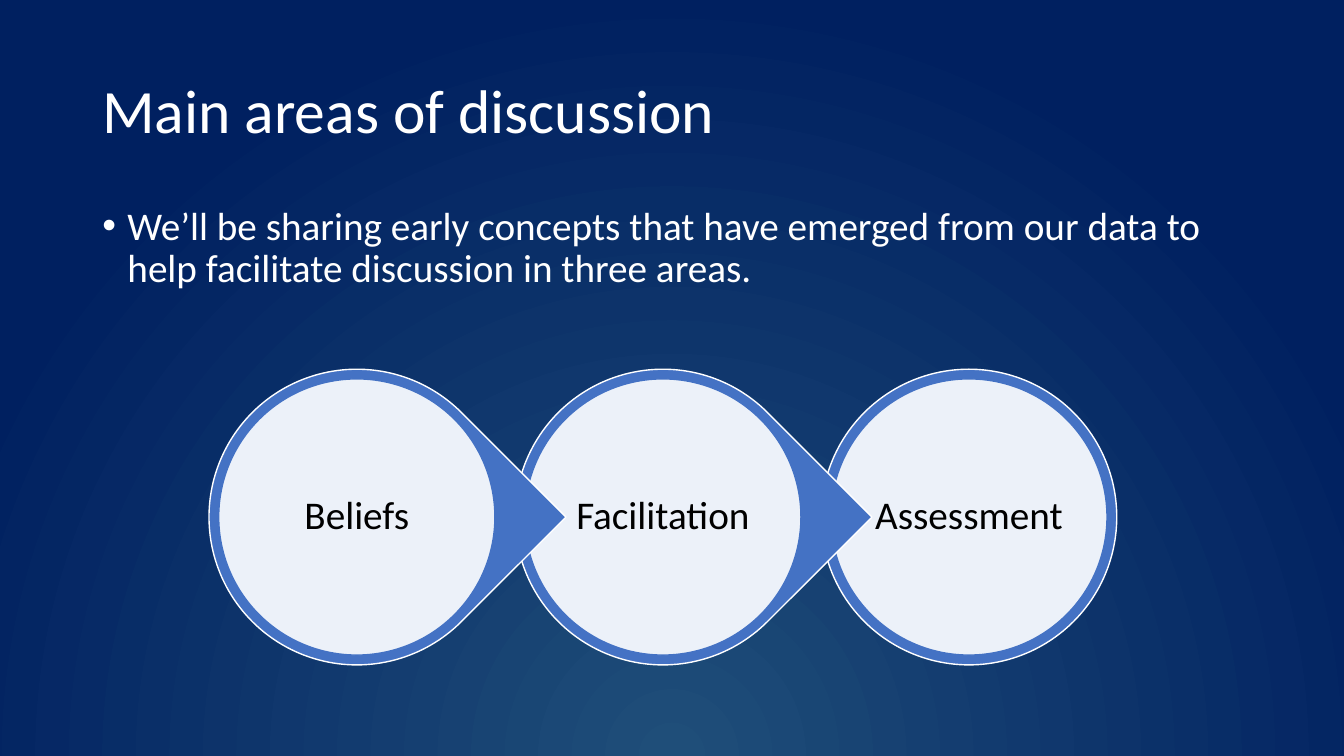
from lxml.etree import SubElement
from pptx import Presentation
from pptx.dml.color import RGBColor
from pptx.enum.shapes import MSO_SHAPE
from pptx.enum.text import MSO_ANCHOR, PP_ALIGN
from pptx.oxml.ns import qn
from pptx.util import Pt

WHITE = RGBColor(0xFF, 0xFF, 0xFF)
BLACK = RGBColor(0x00, 0x00, 0x00)
BLUE = RGBColor(0x44, 0x72, 0xC4)
NAVY = RGBColor(0x00, 0x20, 0x60)
TEAL = RGBColor(0x1F, 0x4E, 0x79)

FONT = "Calibri"
AREAS = ["Beliefs", "Facilitation", "Assessment"]
FIRST_CENTER = 254.9
CENTER_Y = 369.3
PITCH = 218.6
RING_SIZE = 211.2
DISC_SIZE = 197.3
LABEL_SIZE = 141.1


def set_background(slide):
    """Radial gradient, glowing from below the slide."""
    fill = slide.background.fill
    fill.gradient()
    for stop, color in zip(fill.gradient_stops, (TEAL, NAVY)):
        stop.color.rgb = color
    gradient = slide.element.find(".//" + qn("a:gradFill"))
    gradient.remove(gradient.find(qn("a:lin")))
    circle = SubElement(gradient, qn("a:path"), {"path": "circle"})
    focus = {"l": "50000", "t": "130000", "r": "50000", "b": "-30000"}
    SubElement(circle, qn("a:fillToRect"), focus)


def add_text(slide, text, left, top, width, height, size, color,
             anchor=MSO_ANCHOR.MIDDLE):
    box = slide.shapes.add_textbox(Pt(left), Pt(top), Pt(width), Pt(height))
    frame = box.text_frame
    frame.word_wrap = True
    frame.vertical_anchor = anchor
    paragraph = frame.paragraphs[0]
    paragraph.text = text
    paragraph.line_spacing = 0.9
    paragraph.font.name = FONT
    paragraph.font.size = Pt(size)
    paragraph.font.color.rgb = color
    return frame


def add_bullet(paragraph, indent):
    properties = paragraph._p.get_or_add_pPr()
    properties.set("marL", str(Pt(indent)))
    properties.set("indent", str(Pt(-indent)))
    font = SubElement(properties, qn("a:buFont"), {"typeface": "Arial"})
    font.addnext(properties.makeelement(qn("a:buChar"), {"char": "•"}))
    # Default run properties come after the bullet in the schema
    defaults = properties.find(qn("a:defRPr"))
    if defaults is not None:
        properties.append(defaults)


def add_round(slide, kind, center_x, size, fill_color, line_color):
    shape = slide.shapes.add_shape(
        kind, Pt(center_x - size / 2), Pt(CENTER_Y - size / 2),
        Pt(size), Pt(size))
    shape.shadow.inherit = False
    shape.fill.solid()
    shape.fill.fore_color.rgb = fill_color
    shape.line.color.rgb = line_color
    shape.line.width = Pt(1)
    return shape


def add_area(slide, label, center_x, pointed):
    # Ring, pointing to the next area unless it is the last
    kind = MSO_SHAPE.TEAR if pointed else MSO_SHAPE.OVAL
    ring = add_round(slide, kind, center_x, RING_SIZE, BLUE, WHITE)
    if pointed:
        ring.adjustments[0] = 1
        ring.rotation = 45

    # Translucent disc
    disc = add_round(slide, MSO_SHAPE.OVAL, center_x, DISC_SIZE, WHITE, BLUE)
    color = disc.fill._xPr.find(qn("a:solidFill"))[0]
    SubElement(color, qn("a:alpha"), {"val": "90000"})

    # Label
    frame = add_text(slide, label, center_x - LABEL_SIZE / 2,
                     CENTER_Y - LABEL_SIZE / 2, LABEL_SIZE, LABEL_SIZE,
                     28, BLACK)
    frame.margin_left = frame.margin_right = Pt(2.8)
    frame.margin_top = frame.margin_bottom = Pt(2.8)
    frame.paragraphs[0].alignment = PP_ALIGN.CENTER


def main():
    presentation = Presentation()
    presentation.slide_width = Pt(960)
    presentation.slide_height = Pt(540)
    slide = presentation.slides.add_slide(presentation.slide_layouts[6])
    set_background(slide)

    # Title and introduction
    add_text(slide, "Main areas of discussion", 66, 28.8, 828, 104.4, 44, WHITE)
    body = add_text(
        slide,
        "We’ll be sharing early concepts that have emerged from our data to "
        "help facilitate discussion in three areas.",
        66, 144, 828, 342.7, 28, WHITE, MSO_ANCHOR.TOP)
    body.paragraphs[0].space_before = Pt(10)
    add_bullet(body.paragraphs[0], 18)

    # Chain of areas, last one at the back
    last = len(AREAS) - 1
    for index in range(last, -1, -1):
        add_area(slide, AREAS[index], FIRST_CENTER + index * PITCH, index < last)

    presentation.save("out.pptx")


if __name__ == "__main__":
    main()
